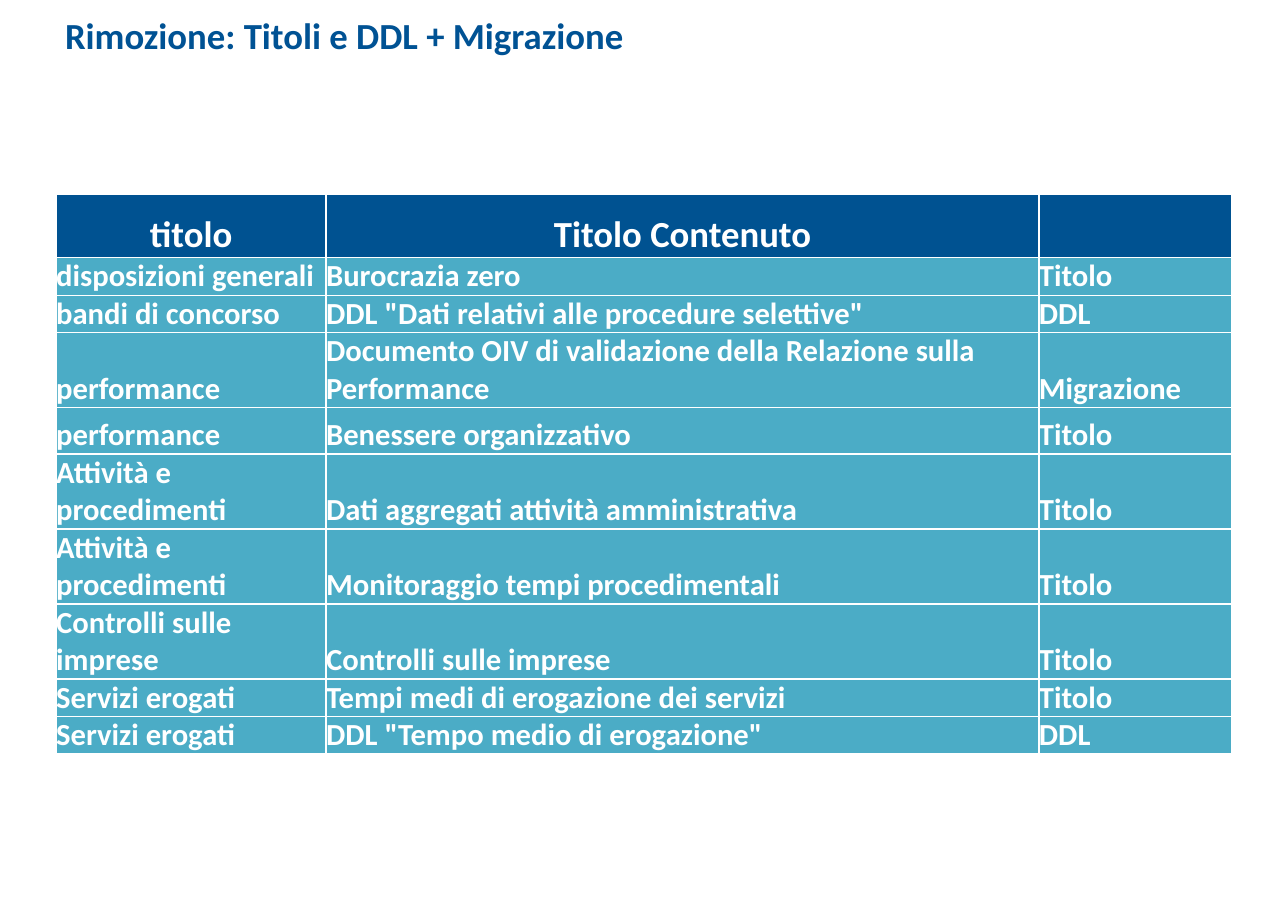
from lxml.etree import SubElement
from pptx import Presentation
from pptx.dml.color import RGBColor
from pptx.enum.text import MSO_ANCHOR, MSO_AUTO_SIZE, PP_ALIGN
from pptx.oxml.ns import qn
from pptx.util import Inches, Pt

TITLE = "Rimozione: Titoli e DDL + Migrazione"
ROWS = [
    ("titolo", "Titolo Contenuto", ""),
    ("disposizioni generali", "Burocrazia zero", "Titolo"),
    ("bandi di concorso", 'DDL "Dati relativi alle procedure selettive"', "DDL"),
    ("performance", "Documento OIV di validazione della Relazione sulla Performance", "Migrazione"),
    ("performance", "Benessere organizzativo", "Titolo"),
    ("Attività e procedimenti", "Dati aggregati attività amministrativa", "Titolo"),
    ("Attività e procedimenti", "Monitoraggio tempi procedimentali", "Titolo"),
    ("Controlli sulle imprese", "Controlli sulle imprese", "Titolo"),
    ("Servizi erogati", "Tempi medi di erogazione dei servizi", "Titolo"),
    ("Servizi erogati", 'DDL "Tempo medio di erogazione"', "DDL"),
]
COL_WIDTHS = [2.45, 6.47, 1.75]
ROW_HEIGHTS = [0.58, 0.31, 0.31, 0.31, 0.42, 0.31, 0.31, 0.42, 0.31, 0.31]
COLORS = {"title": "005294", "header": "005291", "body": "4BACC6", "white": "FFFFFF"}


def style_font(font, size, color):
    font.name = "Calibri"
    font.size = Pt(size)
    font.bold = True
    font.color.rgb = RGBColor.from_string(COLORS[color])


def add_borders(cell):
    tcPr = cell._tc.get_or_add_tcPr()
    for side in ("lnL", "lnR", "lnT", "lnB"):
        ln = SubElement(tcPr, qn(f"a:{side}"), w=str(Pt(1)))
        fill = SubElement(ln, qn("a:solidFill"))
        SubElement(fill, qn("a:srgbClr"), val=COLORS["white"])


def fill_cell(cell, text, header):
    add_borders(cell)
    cell.fill.solid()
    cell.fill.fore_color.rgb = RGBColor.from_string(COLORS["header" if header else "body"])
    cell.margin_left = cell.margin_right = cell.margin_top = cell.margin_bottom = 0
    cell.vertical_anchor = MSO_ANCHOR.BOTTOM
    cell.text_frame.text = text
    p = cell.text_frame.paragraphs[0]
    p.alignment = PP_ALIGN.CENTER if header else PP_ALIGN.LEFT
    for r in p.runs:
        style_font(r.font, 24 if header else 20, "white")


def add_title(slide):
    sp = slide.shapes.title
    sp.left, sp.top, sp.width, sp.height = 0, 0, Inches(11.69), Inches(0.68)
    tf = sp.text_frame
    tf.text = TITLE
    tf.word_wrap = True
    tf.auto_size = MSO_AUTO_SIZE.NONE
    tf.vertical_anchor = MSO_ANCHOR.TOP
    tf.margin_left, tf.margin_right = Inches(0.59), Inches(0.24)
    tf.margin_top, tf.margin_bottom = Inches(0.12), Inches(0.15)
    p = tf.paragraphs[0]
    p.alignment = PP_ALIGN.LEFT
    style_font(p.runs[0].font, 24, "title")


def add_content_table(slide):
    table = slide.shapes.add_table(
        len(ROWS), len(COL_WIDTHS), Inches(0.51), Inches(1.76),
        Inches(sum(COL_WIDTHS)), Inches(sum(ROW_HEIGHTS))).table
    for col, width in zip(table.columns, COL_WIDTHS):
        col.width = Inches(width)
    for i, (row, height) in enumerate(zip(table.rows, ROW_HEIGHTS)):
        row.height = Inches(height)
        for cell, text in zip(row.cells, ROWS[i]):
            fill_cell(cell, text, header=i == 0)


def main():
    prs = Presentation()
    prs.slide_width, prs.slide_height = Inches(11.69), Inches(8.27)
    slide = prs.slides.add_slide(prs.slide_layouts[5])
    add_title(slide)
    add_content_table(slide)
    prs.save("out.pptx")


if __name__ == "__main__":
    main()
